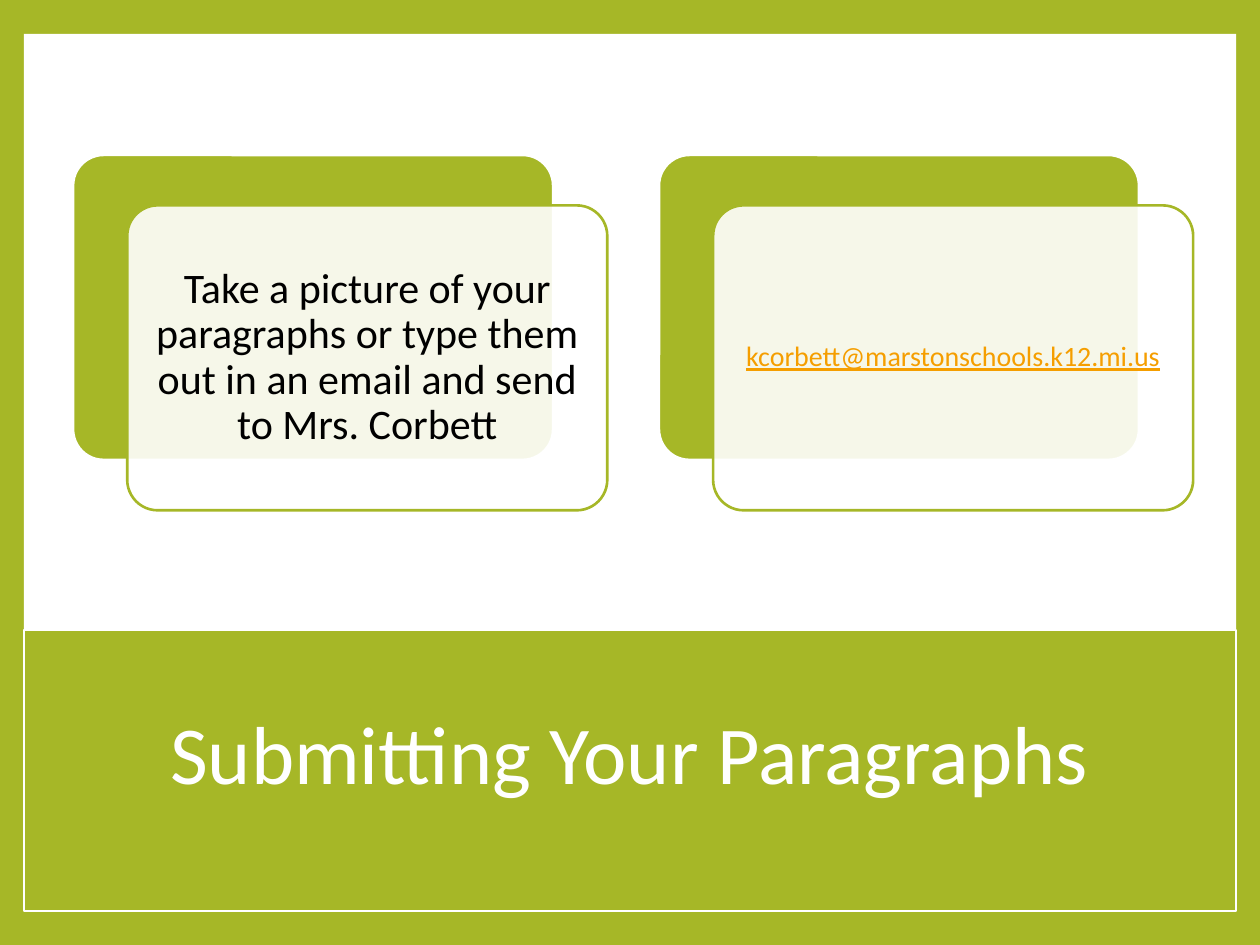
from dataclasses import dataclass

from lxml import etree
from pptx import Presentation
from pptx.dml.color import RGBColor
from pptx.enum.shapes import MSO_SHAPE
from pptx.enum.text import MSO_ANCHOR, PP_ALIGN
from pptx.oxml.ns import qn
from pptx.util import Inches, Pt

RECT, ROUNDED = MSO_SHAPE.RECTANGLE, MSO_SHAPE.ROUNDED_RECTANGLE
MIDDLE, CENTER = MSO_ANCHOR.MIDDLE, PP_ALIGN.CENTER


@dataclass(frozen=True)
class Theme:
    green: RGBColor = RGBColor(0xA6, 0xB7, 0x27)
    white: RGBColor = RGBColor(0xFF, 0xFF, 0xFF)
    black: RGBColor = RGBColor(0, 0, 0)
    link: RGBColor = RGBColor(0xF5, 0x9E, 0x00)
    font: str = "Calibri"
    title_size: int = 47
    body_size: int = 24
    link_size: int = 16
    card_line: float = 1.5
    card_opacity: int = 90


THEME = Theme()
WIDTH, HEIGHT = 10, 7.5
MARGIN_X, MARGIN_Y = 0.19, 0.27
BAND_TOP = HEIGHT * 2 / 3
CARD_LEFT, CARD_TOP, CARD_PITCH = 0.58, 1.23, 4.65
CARD_BOX = (4.24, 2.82)
CARD_OFFSET = (0.43, 0.4)
CARDS = [
    ("Take a picture of your paragraphs or type them out in an email "
     "and send to Mrs. Corbett", THEME.body_size, THEME.black, False, 0.1),
    ("kcorbett@marstonschools.k12.mi.us",
     THEME.link_size, THEME.link, True, 0.07),
]


def add_panel(slide, kind, box, fill, line=None, line_width=1):
    panel = slide.shapes.add_shape(kind, *map(Inches, box))
    panel.shadow.inherit = False
    panel.fill.solid()
    panel.fill.fore_color.rgb = fill
    if line is None:
        panel.line.fill.background()
    else:
        panel.line.color.rgb = line
        panel.line.width = Pt(line_width)
    if kind == ROUNDED:
        panel.adjustments[0] = 0.1
    return panel


def set_opacity(panel, percent):
    color = panel.fill._xPr.find(qn("a:solidFill"))[0]
    etree.SubElement(color, qn("a:alpha"), val=str(percent * 1000))


def write_centered(holder, text, size, color, underline=False, inset=0.1):
    frame = holder.text_frame
    frame.word_wrap = True
    frame.vertical_anchor = MIDDLE
    frame.margin_left = frame.margin_right = Inches(inset)
    frame.margin_top = frame.margin_bottom = Inches(inset)
    paragraph = frame.paragraphs[0]
    paragraph.text = text
    paragraph.alignment = CENTER
    paragraph.line_spacing = 0.9
    font = paragraph.runs[0].font if underline else paragraph.font
    font.name, font.size = THEME.font, Pt(size)
    font.color.rgb = color
    if underline:
        font.underline = True


def add_frame(slide, box):
    """Draw the green border with the white page inside it."""
    left, top, width, height = box
    add_panel(slide, RECT, box, THEME.green)
    page = (left + MARGIN_X, top + MARGIN_Y,
            width - 2 * MARGIN_X, height - 2 * MARGIN_Y)
    add_panel(slide, RECT, page, THEME.white)


def add_title_band(slide, box, title):
    left, top, width, height = box
    add_panel(slide, RECT, box, THEME.green, THEME.white)
    title_box = (left + 0.078 * width, top + height / 8,
                 0.843 * width, 0.66 * height)
    heading = slide.shapes.add_textbox(*map(Inches, title_box))
    write_centered(heading, title, THEME.title_size, THEME.white)


def add_card(slide, box, *message):
    """Draw a green card and, shifted down and right, the card with text."""
    left, top, width, height = box
    dx, dy = CARD_OFFSET
    size = (width - dx, height - dy)
    add_panel(slide, ROUNDED, (left, top, *size),
              THEME.green, THEME.white, THEME.card_line)
    front = add_panel(slide, ROUNDED, (left + dx, top + dy, *size),
                      THEME.white, THEME.green, THEME.card_line)
    set_opacity(front, THEME.card_opacity)
    write_centered(front, *message)


def main():
    deck = Presentation()
    deck.slide_width, deck.slide_height = Inches(WIDTH), Inches(HEIGHT)
    slide = deck.slides.add_slide(deck.slide_layouts[6])
    add_frame(slide, (0, 0, WIDTH, HEIGHT))
    band = (MARGIN_X, BAND_TOP,
            WIDTH - 2 * MARGIN_X, HEIGHT - MARGIN_Y - BAND_TOP)
    add_title_band(slide, band, "Submitting Your Paragraphs")
    for column, message in enumerate(CARDS):
        left = CARD_LEFT + column * CARD_PITCH
        add_card(slide, (left, CARD_TOP, *CARD_BOX), *message)
    deck.save("out.pptx")


if __name__ == "__main__":
    main()
